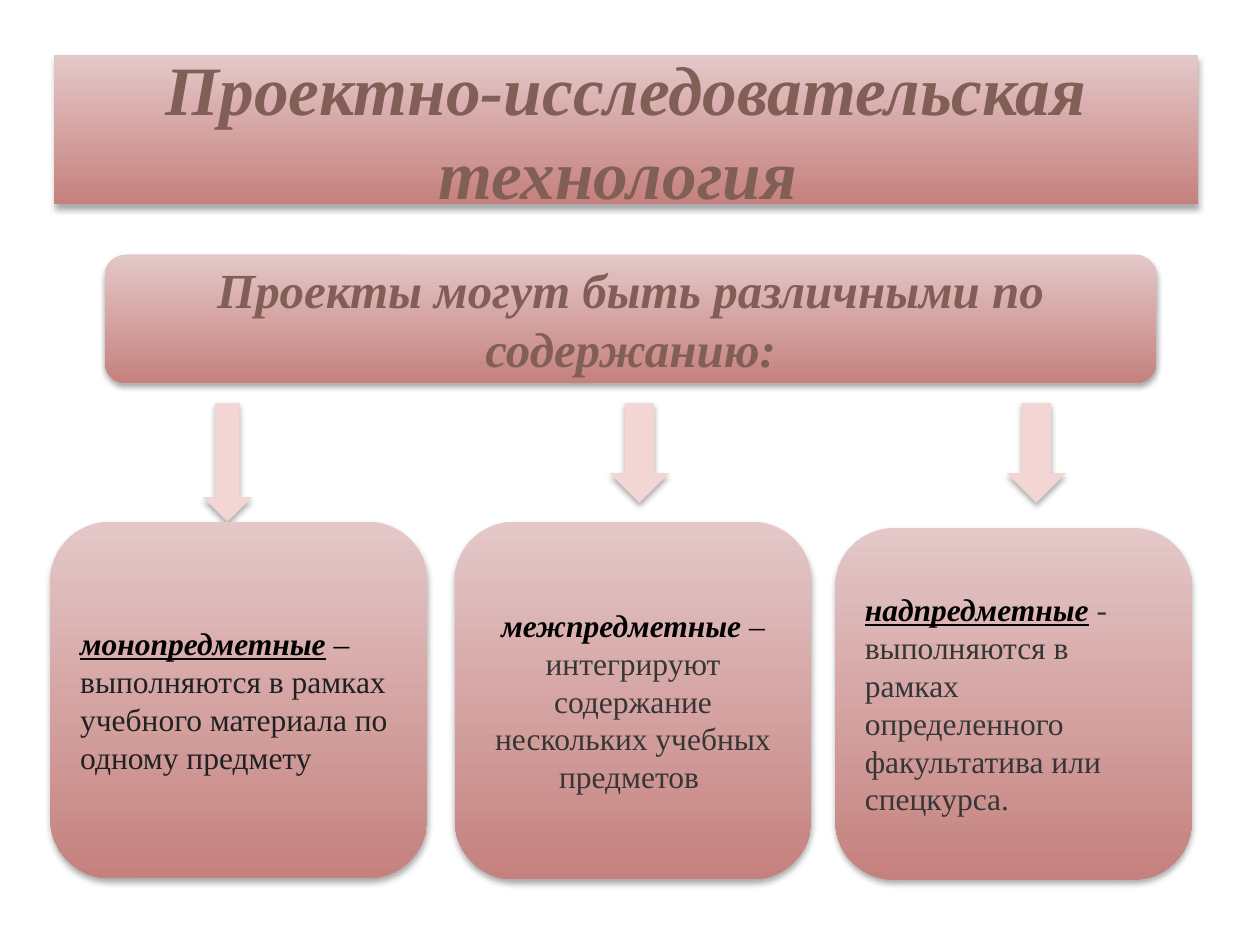
from lxml import etree
from pptx import Presentation
from pptx.dml.color import RGBColor
from pptx.enum.shapes import MSO_SHAPE as Shape
from pptx.enum.text import MSO_ANCHOR as Anchor, PP_ALIGN as Align
from pptx.oxml.ns import nsdecls
from pptx.util import Inches, Pt

FONT = "Times New Roman"
LIGHT, DARK, PALE = "E4C8C8", "C5817E", "F3D5D3"
BROWN, BLACK, INK, GRAY = "815F56", "000000", "212121", "363636"

# Run: text, colour, style letters (b bold, i italic, u underline)
# Banner: shape, place, size, text
BANNERS = [
    (Shape.RECTANGLE, (0.43, 0.44, 9.08, 1.18), 39.6,
     "Проектно-исследовательская технология "),
    (Shape.ROUNDED_RECTANGLE, (0.83, 2.02, 8.35, 1.02), 28,
     "Проекты могут быть различными по содержанию:"),
]
# Kind of project: arrow place, box place, alignment, runs
KINDS = [
    ((1.61, 3.2, 0.39, 0.94), (0.4, 4.14, 2.99, 2.83), Align.LEFT, [
        ("монопредметные", BLACK, "biu"),
        (" – ", BLACK, ""),
        ("выполняются в рамках учебного материала по одному предмету", INK, ""),
    ]),
    ((4.84, 3.2, 0.47, 0.79), (3.61, 4.14, 2.83, 2.84), Align.CENTER, [
        ("межпредметные ", BLACK, "bi"),
        ("– ", BLACK, ""),
        ("интегрируют содержание нескольких учебных предметов ", GRAY, ""),
    ]),
    ((7.99, 3.2, 0.47, 0.79), (6.63, 4.19, 2.83, 2.79), Align.LEFT, [
        ("надпредметные", BLACK, "biu"),
        (" ", BLACK, "b"),
        ("- выполняются в рамках определенного факультатива или спецкурса.",
         GRAY, ""),
    ]),
]
SHADOW = (
    f'<a:effectLst {nsdecls("a")}>'
    f'<a:outerShdw blurRad="{Pt(3.5)}" dist="{Pt(2.2)}" dir="5400000" '
    'rotWithShape="0"><a:srgbClr val="000000"><a:alpha val="32000"/>'
    '</a:srgbClr></a:outerShdw></a:effectLst>'
)


def rgb(code):
    return RGBColor.from_string(code)


def add_block(slide, kind, place, colors):
    """Add a shadowed shape, plain with one colour, top-down gradient with two."""
    block = slide.shapes.add_shape(kind, *map(Inches, place))
    block.line.fill.background()
    fill = block.fill
    if len(colors) == 1:
        fill.solid()
        fill.fore_color.rgb = rgb(colors[0])
    else:
        fill.gradient()
        fill.gradient_angle = 270
        for stop, color, pos in zip(fill.gradient_stops, colors, (0, 1)):
            stop.color.rgb = rgb(color)
            stop.position = pos
    block.shadow.inherit = False
    props = block.element.spPr
    props.replace(props.find("{*}effectLst"), etree.fromstring(SHADOW))
    return block


def write(block, runs, size, align):
    frame = block.text_frame
    frame.word_wrap = True
    frame.vertical_anchor = Anchor.MIDDLE
    para = frame.paragraphs[0]
    para.alignment = align
    for text, color, style in runs:
        run = para.add_run()
        run.text = text
        font = run.font
        font.name, font.size = FONT, Pt(size)
        font.color.rgb = rgb(color)
        font.bold, font.italic, font.underline = (k in style for k in "biu")


def main():
    deck = Presentation()
    deck.slide_width, deck.slide_height = Inches(10), Inches(7.5)
    slide = deck.slides.add_slide(deck.slide_layouts[6])

    for kind, place, size, text in BANNERS:
        banner = add_block(slide, kind, place, (LIGHT, DARK))
        write(banner, [(text, BROWN, "bi")], size, Align.CENTER)

    for arrow, place, align, runs in KINDS:
        add_block(slide, Shape.DOWN_ARROW, arrow, (PALE,))
        box = add_block(slide, Shape.ROUNDED_RECTANGLE, place, (LIGHT, DARK))
        write(box, runs, 18, align)

    deck.save("out.pptx")


if __name__ == "__main__":
    main()
